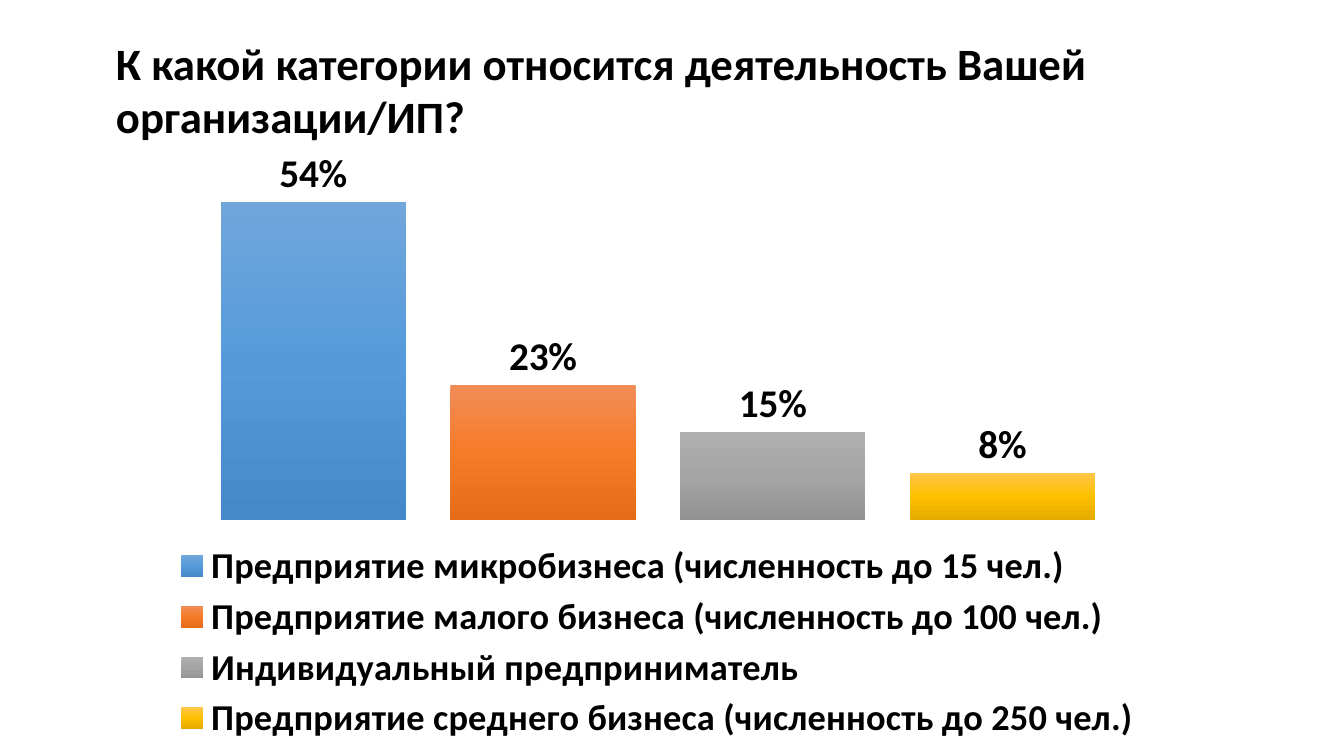
import copy

import pptx
import pptx.chart.data
import pptx.dml.color
import pptx.enum.chart
import pptx.enum.text
import pptx.oxml
import pptx.oxml.ns
import pptx.util
from pptx.util import Inches

FONT = "Calibri"
COLORS = {
    "text": "000000",
    "micro": ("71A6DB", "559BDB", "448ACA"),
    "small": ("F18C57", "F67B28", "E56C19"),
    "sole": ("AFAFAF", "A5A5A5", "939393"),
    "medium": ("FFC64B", "FFC000", "E3AB00"),
}
QUESTION = "К какой категории относится деятельность Вашей организации/ИП?"
ANSWERS = [
    ("micro", "Предприятие микробизнеса (численность до 15 чел.)", 0.54),
    ("small", "Предприятие малого бизнеса (численность до 100 чел.)", 0.23),
    ("sole", "Индивидуальный предприниматель", 0.15),
    ("medium", "Предприятие среднего бизнеса (численность до 250 чел.)", 0.08),
]


def rgb(value):
    return pptx.dml.color.RGBColor.from_string(value)


def style_font(font, size):
    font.name = FONT
    font.size = pptx.util.Pt(size)
    font.bold = True
    font.color.rgb = rgb(COLORS["text"])


def add_title(slide, text):
    title = slide.shapes.title
    title.left, title.top = Inches(1.05), Inches(0.3)
    title.width, title.height = Inches(11.9), Inches(1.18)
    frame = title.text_frame
    frame.word_wrap = True
    frame.auto_size = pptx.enum.text.MSO_AUTO_SIZE.SHAPE_TO_FIT_TEXT
    frame.vertical_anchor = pptx.enum.text.MSO_ANCHOR.TOP
    paragraph = frame.paragraphs[0]
    paragraph.alignment = pptx.enum.text.PP_ALIGN.LEFT
    paragraph.line_spacing = 1.0
    run = paragraph.add_run()
    run.text = text
    style_font(run.font, 32)


def fill_gradient(series, shades):
    fill = series.format.fill
    fill.gradient()
    fill.gradient_angle = 270  # downwards
    stop_list = series._element.find(".//" + pptx.oxml.ns.qn("a:gsLst"))
    stop_list.insert(1, copy.deepcopy(stop_list[0]))
    for stop, shade, position in zip(fill.gradient_stops, shades, (0, 0.5, 1)):
        stop.color.rgb = rgb(shade)
        stop.position = position


def label_values(series):
    labels = series.data_labels
    labels.show_value = True
    labels.position = pptx.enum.chart.XL_LABEL_POSITION.OUTSIDE_END
    labels.number_format = "0%"
    labels.number_format_is_linked = False
    style_font(labels.font, 28)


def set_layout(parent, index, x, y, w, h, inner=False):
    """Place the plot area or the legend by fractions of the chart."""
    for old in parent.findall(pptx.oxml.ns.qn("c:layout")):
        parent.remove(old)
    target = '<c:layoutTarget val="inner"/>' if inner else ""
    parent.insert(index, pptx.oxml.parse_xml(
        f'<c:layout {pptx.oxml.ns.nsdecls("c")}><c:manualLayout>{target}'
        '<c:xMode val="edge"/><c:yMode val="edge"/>'
        f'<c:x val="{x}"/><c:y val="{y}"/><c:w val="{w}"/><c:h val="{h}"/>'
        '</c:manualLayout></c:layout>'))


def add_answer_chart(slide):
    data = pptx.chart.data.CategoryChartData(number_format="0%")
    data.categories = ["1"]
    for _, name, share in ANSWERS:
        data.add_series(name, [share])
    chart = slide.shapes.add_chart(
        pptx.enum.chart.XL_CHART_TYPE.COLUMN_CLUSTERED,
        Inches(1.05), Inches(1.48), Inches(10.95), Inches(5.93), data).chart
    chart.has_title = False
    style_font(chart.font, 28)

    # Hidden axes
    chart.value_axis.minimum_scale = 0
    chart.value_axis.maximum_scale = 0.6
    for axis in (chart.category_axis, chart.value_axis):
        axis.has_major_gridlines = False
        axis.visible = False

    # Columns
    plot = chart.plots[0]
    plot.gap_width, plot.overlap = 100, -24
    plot.vary_by_categories = False
    for series, (key, _, _) in zip(plot.series, ANSWERS):
        fill_gradient(series, COLORS[key])
        label_values(series)
    plot_area = chart._chartSpace.chart.plotArea
    set_layout(plot_area, 0, 0.02, 0.03, 0.96, 0.59, inner=True)

    # Legend
    chart.has_legend = True
    legend = chart.legend
    legend.position = pptx.enum.chart.XL_LEGEND_POSITION.BOTTOM
    legend.include_in_layout = False
    style_font(legend.font, 26)
    set_layout(legend._element, 1, 0.06, 0.65, 0.88, 0.35)


def main():
    deck = pptx.Presentation()
    deck.slide_width, deck.slide_height = Inches(13.33), Inches(7.5)
    slide = deck.slides.add_slide(deck.slide_layouts[5])
    add_title(slide, QUESTION)
    add_answer_chart(slide)
    deck.save("out.pptx")


if __name__ == "__main__":
    main()
